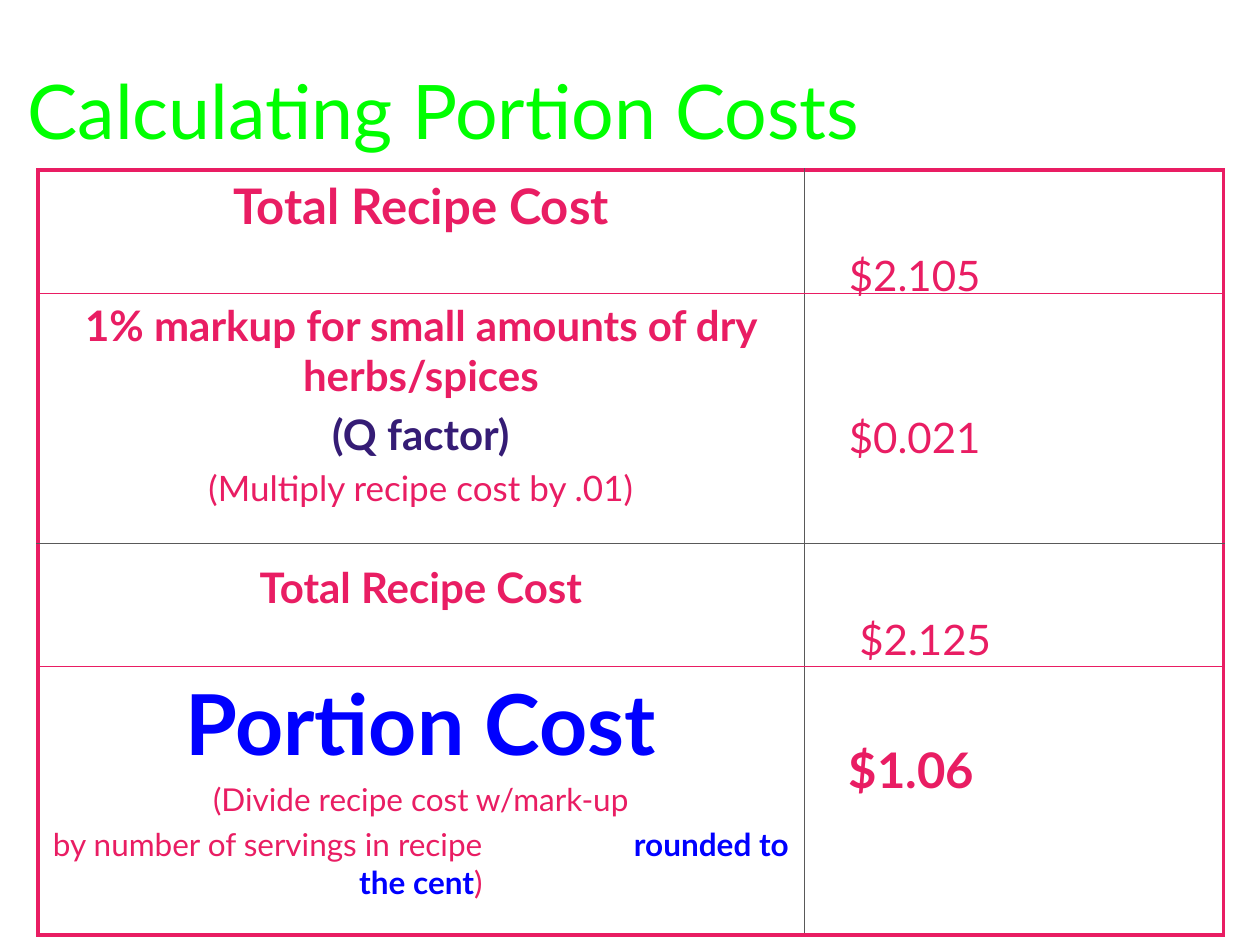
from dataclasses import dataclass

from lxml import etree
from pptx import Presentation
from pptx.dml.color import RGBColor
from pptx.enum.text import MSO_ANCHOR, PP_ALIGN
from pptx.oxml.ns import qn
from pptx.util import Pt

LEFT, CENTER = PP_ALIGN.LEFT, PP_ALIGN.CENTER
MIDDLE = MSO_ANCHOR.MIDDLE
PINK = RGBColor(0xE9, 0x1D, 0x63)
GREEN = RGBColor(0x00, 0xFF, 0x00)
BLUE = RGBColor(0x00, 0x00, 0xFF)
PURPLE = RGBColor(0x35, 0x1C, 0x75)
GREY = RGBColor(0x59, 0x59, 0x59)
FONT = "Lato"


@dataclass
class Run:
    text: str
    size: float
    color: RGBColor = PINK
    bold: bool = False


@dataclass
class Para:
    runs: list[Run]
    before: float = 0
    tab: float = 0


@dataclass
class Step:
    height: float
    paras: list[Para]
    margin_top: float = 3.6


@dataclass
class Value:
    left: float
    top: float
    height: float
    run: Run


@dataclass
class Line:
    color: RGBColor
    width: float


OUTER = Line(PINK, 2.25)
DIVIDER = Line(PINK, 1)
THIN = Line(GREY, 0.5)

STEPS = [
    Step(70.6, [Para([Run("Total Recipe Cost", 28, bold=True)])]),
    Step(142.6, [
        Para([Run("1% markup for small amounts of dry herbs/spices", 24, bold=True)], 4.8),
        Para([Run("(Q factor)", 24, PURPLE, True)], 4.8),
        Para([Run("(Multiply recipe cost by .01)", 20)], 4),
    ]),
    Step(70.6, [Para([Run("Total Recipe Cost", 24, bold=True)])], margin_top=11),
    Step(153.4, [
        Para([Run("Portion Cost", 48, BLUE, True)]),
        Para([Run("(Divide recipe cost w/mark-up", 18)], 4),
        Para([Run("by number of servings in recipe", 18),
              Run("\trounded to the cent", 18, BLUE, True),
              Run(")", 18)], 4, tab=332),
    ]),
]
ROW_LINES = [OUTER, DIVIDER, THIN, DIVIDER, OUTER]
COL_LINES = [OUTER, THIN, OUTER]
COL_WIDTHS = [437.8, 239.8]

VALUES = [
    Value(478, 139, 36, Run("$2.105", 24)),
    Value(478, 231.8, 36, Run("$0.021", 24)),
    Value(484, 347, 36, Run("$2.125", 24)),
    Value(478, 419, 92, Run("$1.06", 28, bold=True)),
]


def write(tf, paras: list[Para], align=LEFT) -> None:
    tf.word_wrap = True
    for i, para in enumerate(paras):
        p = tf.add_paragraph() if i else tf.paragraphs[0]
        p.alignment = align
        p.space_before = Pt(para.before)
        if para.tab:
            tabs = etree.SubElement(p._p.get_or_add_pPr(), qn("a:tabLst"))
            etree.SubElement(tabs, qn("a:tab"), pos=str(Pt(para.tab)), algn="l")
        for run in para.runs:
            r = p.add_run()
            r.text = run.text
            r.font.name = FONT
            r.font.size = Pt(run.size)
            r.font.bold = run.bold
            r.font.color.rgb = run.color


def set_borders(cell, **lines: Line) -> None:
    """Put the lines, given in the order L, R, T, B, ahead of the cell's fill."""
    props = cell._tc.get_or_add_tcPr()
    for i, (side, line) in enumerate(lines.items()):
        ln = etree.Element(qn(f"a:ln{side}"), w=str(Pt(line.width)))
        fill = etree.SubElement(ln, qn("a:solidFill"))
        etree.SubElement(fill, qn("a:srgbClr"), val=str(line.color))
        props.insert(i, ln)


def add_title(s, text: str) -> None:
    title = s.shapes.title
    title.left, title.top, title.width, title.height = Pt(8.6), Pt(17.3), Pt(613.4), Pt(90)
    title.text_frame.vertical_anchor = MIDDLE
    write(title.text_frame, [Para([Run(text, 43, GREEN)])])


def add_cost_table(s, steps: list[Step]) -> None:
    height = sum(step.height for step in steps)
    table = s.shapes.add_table(len(steps), len(COL_WIDTHS), Pt(21.6), Pt(97.2),
                               Pt(sum(COL_WIDTHS)), Pt(height)).table
    table.first_row = table.horz_banding = False
    for column, width in zip(table.columns, COL_WIDTHS):
        column.width = Pt(width)
    for r, step in enumerate(steps):
        table.rows[r].height = Pt(step.height)
        label = table.cell(r, 0)
        label.margin_top = Pt(step.margin_top)
        write(label.text_frame, step.paras, CENTER)
        for c in range(len(COL_WIDTHS)):
            cell = table.cell(r, c)
            cell.fill.background()
            set_borders(cell, L=COL_LINES[c], R=COL_LINES[c + 1],
                        T=ROW_LINES[r], B=ROW_LINES[r + 1])


def add_value(s, value: Value) -> None:
    box = s.shapes.add_textbox(Pt(value.left), Pt(value.top), Pt(210), Pt(value.height))
    write(box.text_frame, [Para([value.run])])


def main() -> None:
    prs = Presentation()
    prs.slide_width, prs.slide_height = Pt(720), Pt(540)
    s = prs.slides.add_slide(prs.slide_layouts[5])
    add_title(s, "Calculating Portion Costs")
    add_cost_table(s, STEPS)
    for value in VALUES:
        add_value(s, value)
    prs.save("out.pptx")


if __name__ == "__main__":
    main()
